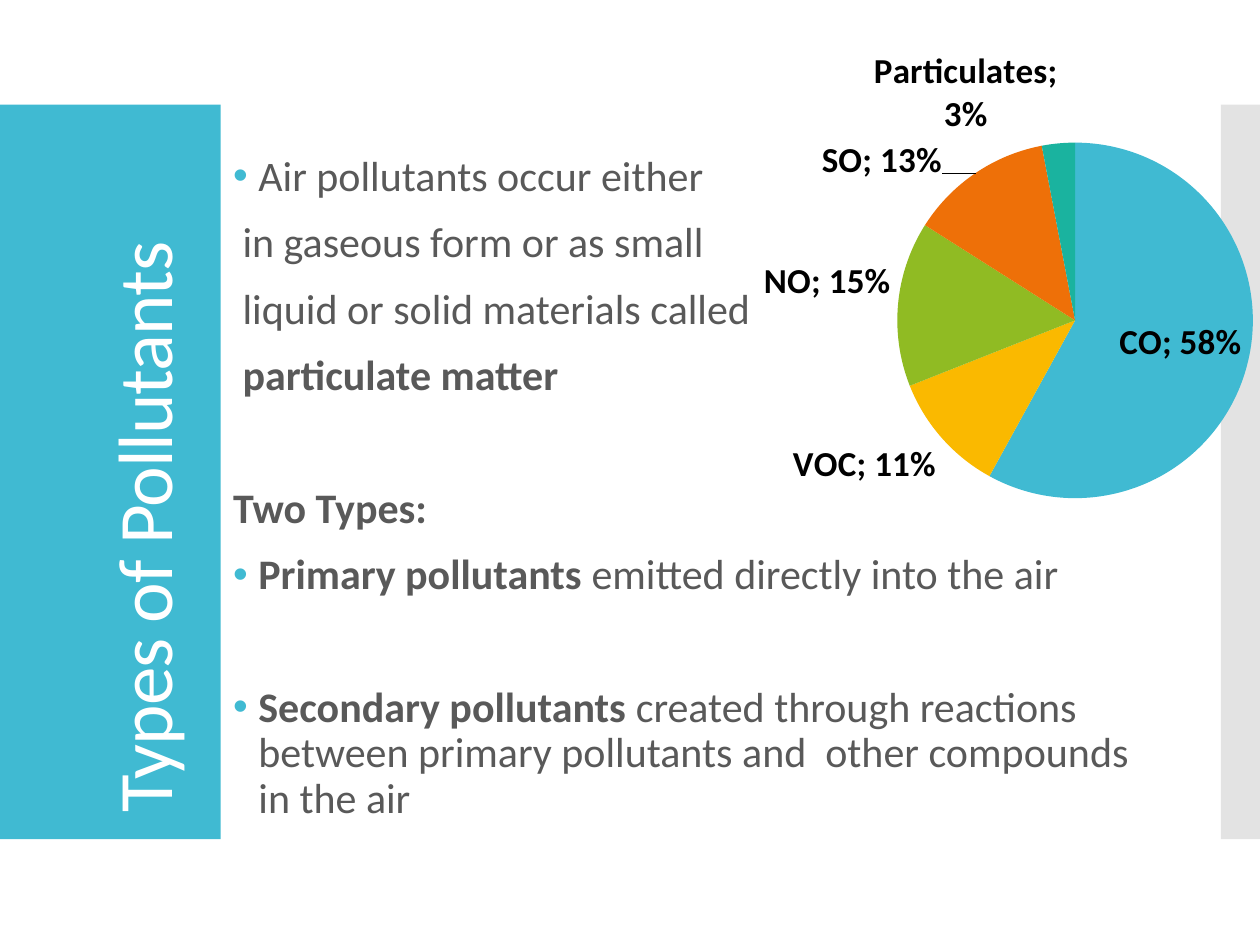
from copy import deepcopy

from pptx import Presentation
from pptx import util as u
from pptx.chart import data as chart_data
from pptx.dml import color
from pptx.enum import chart as charts, shapes, text
from pptx.oxml import parse_xml
from pptx.oxml.ns import nsdecls, qn

FONT = "Calibri"
COLORS = {
    "teal": "40BAD2", "yellow": "FAB900", "green": "90BB23",
    "orange": "EE7008", "mint": "1AB39F", "silver": "C8C8C8",
    "gray": "595959", "white": "FFFFFF", "black": "000000",
}
POLLUTANTS = [
    ("CO", 0.58, "teal"), ("VOC", 0.11, "yellow"), ("NO", 0.15, "green"),
    ("SO", 0.13, "orange"), ("Particulates", 0.03, "mint"),
]
LINE_GAP, SECTION_GAP = 12, 50
LINE_INDENT, BULLET_INDENT = 0.19, 0.51
BODY = [
    ([("Air pollutants occur either", False)], dict(bullet=True, before=0)),
    ([("in gaseous form or as small", False)], dict(indent=LINE_INDENT)),
    ([("liquid or solid materials called", False)], dict(indent=LINE_INDENT)),
    ([("particulate matter", True)], dict(indent=LINE_INDENT)),
    ([("Two Types:", True)], dict(before=SECTION_GAP)),
    ([("Primary pollutants", True), (" emitted directly into the air", False)],
     dict(bullet=True)),
    ([("Secondary pollutants ", True),
      ("created through reactions between primary pollutants and  other "
       "compounds in the air", False)],
     dict(bullet=True, before=SECTION_GAP)),
]


def rgb(name):
    """Return the palette colour with this name."""
    return color.RGBColor.from_string(COLORS[name])


def cm_box(*lengths):
    """Convert left, top, width and height from centimetres."""
    return [u.Cm(length) for length in lengths]


def add_panel(slide, box, fill, opacity=100):
    """Add a borderless rectangle."""
    shape = slide.shapes.add_shape(shapes.MSO_SHAPE.RECTANGLE, *cm_box(*box))
    shape.shadow.inherit = False
    shape.line.fill.background()
    shape.fill.solid()
    shape.fill.fore_color.rgb = rgb(fill)
    if opacity < 100:
        tint = shape.fill._xPr.find(".//" + qn("a:srgbClr"))
        tint.append(parse_xml(
            f'<a:alpha {nsdecls("a")} val="{opacity * 1000}"/>'))
    return shape


def format_font(font, size, tone, bold=False):
    """Set the face, size, colour and weight of a font."""
    font.name, font.size, font.bold = FONT, u.Pt(size), bold
    font.color.rgb = rgb(tone)


def add_bullet(paragraph):
    """Give a paragraph a hanging teal bullet."""
    properties = paragraph._p.get_or_add_pPr()
    hang = u.Cm(BULLET_INDENT)
    properties.set("marL", str(hang))
    properties.set("indent", str(-hang))
    for content in (
        f'<a:buClr {nsdecls("a")}><a:srgbClr val="{COLORS["teal"]}"/></a:buClr>',
        f'<a:buFont {nsdecls("a")} typeface="Arial"/>',
        f'<a:buChar {nsdecls("a")} char="•"/>',
    ):
        properties.append(parse_xml(content))


def write_paragraph(paragraph, runs, size=24, tone="gray", bullet=False,
                    indent=0, before=LINE_GAP, tracking=0):
    """Write (text, bold) runs into a formatted paragraph."""
    if bullet:
        add_bullet(paragraph)
    elif indent:
        paragraph._p.get_or_add_pPr().set("marL", str(u.Cm(indent)))
    paragraph.alignment = text.PP_ALIGN.LEFT
    paragraph.line_spacing = 0.9
    paragraph.space_before = u.Pt(before)
    for words, bold in runs:
        run = paragraph.add_run()
        run.text = words
        format_font(run.font, size, tone, bold)
        if tracking:
            run._r.get_or_add_rPr().set("spc", str(tracking))


def add_title(slide):
    """Add the title that reads upward along the left panel."""
    shape = slide.shapes.add_textbox(*cm_box(-3.63, 7.67, 13.23, 4.67))
    shape.rotation = 270
    frame = shape.text_frame
    frame.word_wrap = True
    frame.vertical_anchor = text.MSO_ANCHOR.MIDDLE
    write_paragraph(frame.paragraphs[0], [("Types of Pollutants", False)],
                    size=44, tone="white", before=0, tracking=-60)


def add_body(slide):
    """Add the white text panel."""
    frame = add_panel(slide, (4.45, 1.7, 19.25, 16.31), "white").text_frame
    frame.word_wrap = True
    frame.vertical_anchor = text.MSO_ANCHOR.MIDDLE
    for index, (runs, options) in enumerate(BODY):
        paragraph = frame.add_paragraph() if index else frame.paragraphs[0]
        write_paragraph(paragraph, runs, **options)


def manual_layout(x, y, extra=""):
    """Build a chart layout element with fractional offsets."""
    return parse_xml(
        f'<c:layout {nsdecls("c")}><c:manualLayout>{extra}'
        f'<c:x val="{x}"/><c:y val="{y}"/></c:manualLayout></c:layout>')


def place_plot(chart, x, y, width, height):
    """Fix the inner plot area as fractions of the chart."""
    modes = ('<c:layoutTarget val="inner"/><c:xMode val="edge"/>'
             '<c:yMode val="edge"/>')
    layout = manual_layout(x, y, modes)
    for tag, value in (("w", width), ("h", height)):
        layout[0].append(parse_xml(
            f'<c:{tag} {nsdecls("c")} val="{value}"/>'))
    area = chart._chartSpace.chart.plotArea
    for old in area.findall(qn("c:layout")):
        area.remove(old)
    area.insert(0, layout)


def shift_label(labels, position, index, x, y, place):
    """Move one data label away from its usual place."""
    label = parse_xml(f'<c:dLbl {nsdecls("c")}><c:idx val="{index}"/></c:dLbl>')
    label.append(manual_layout(x, y))
    for child in labels:
        if child.tag not in (qn("c:dLbl"), qn("c:showLeaderLines")):
            label.append(deepcopy(child))
    label.find(qn("c:dLblPos")).set("val", place)
    labels.insert(position, label)


def add_pollutant_chart(slide):
    """Add the pie chart of pollutant shares."""
    data = chart_data.CategoryChartData(number_format="0%")
    data.categories = [name for name, _, _ in POLLUTANTS]
    data.add_series("Series 1", [share for _, share, _ in POLLUTANTS])
    chart = slide.shapes.add_chart(
        charts.XL_CHART_TYPE.PIE, *cm_box(10.59, 0.64, 19.48, 10.01), data).chart
    chart.has_legend = chart.has_title = False
    format_font(chart.font, 18, "black")
    chart.plots[0].vary_by_categories = True
    place_plot(chart, 0.385, 0.223, 0.368, 0.717)
    series = chart.plots[0].series[0]
    for index, (_, _, tone) in enumerate(POLLUTANTS):
        fill = series.points[index].format.fill
        fill.solid()
        fill.fore_color.rgb = rgb(tone)
    labels = series.data_labels
    labels.show_value = labels.show_category_name = True
    labels.show_percentage = False
    labels.number_format, labels.number_format_is_linked = "0%", False
    labels.position = charts.XL_LABEL_POSITION.OUTSIDE_END
    format_font(labels.font, 20, "black", True)
    element = labels._element
    element.find(qn("c:showBubbleSize")).addnext(parse_xml(
        f'<c:separator {nsdecls("c")}>; </c:separator>'))
    shift_label(element, 0, 0, 0.02, 0, "ctr")
    shift_label(element, 1, 3, -0.03, 0.03, "outEnd")


def main():
    """Build and save the slide."""
    presentation = Presentation()
    presentation.slide_width, presentation.slide_height = u.Cm(25.4), u.Cm(19.05)
    slide = presentation.slides.add_slide(presentation.slide_layouts[6])
    add_panel(slide, (0, 2.11, 7.16, 14.81), "teal")
    add_panel(slide, (24.61, 2.11, 0.79, 14.81), "silver", opacity=50)
    add_title(slide)
    add_body(slide)
    add_pollutant_chart(slide)
    presentation.save("out.pptx")


if __name__ == "__main__":
    main()
